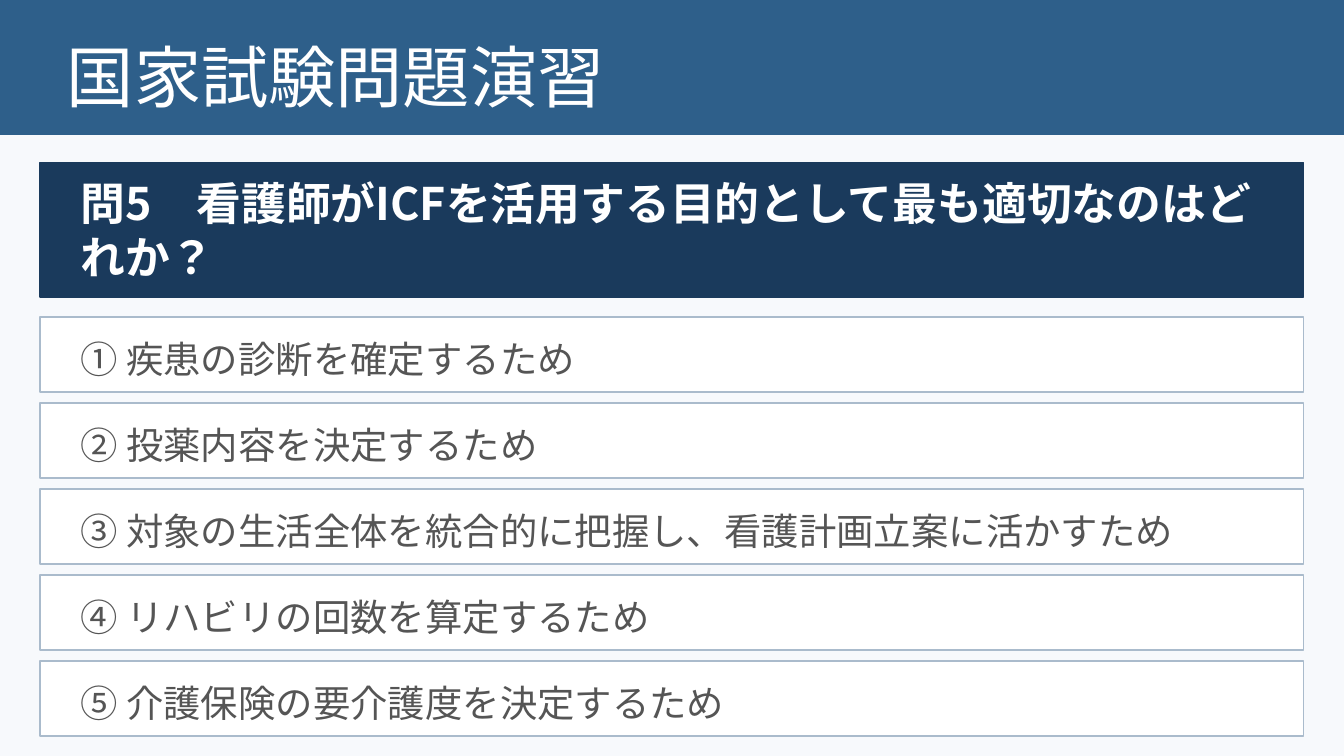
from dataclasses import dataclass

from lxml import etree
from pptx import Presentation
from pptx import util as u
from pptx.dml.color import RGBColor
from pptx.enum import lang, shapes, text
from pptx.oxml.ns import qn
from pptx.slide import Slide

FONT = "Noto Sans CJK JP"
COLORS = {
    "background": "F7F9FC",
    "header": "2E5F8A",
    "question": "1A3A5C",
    "white": "FFFFFF",
    "border": "AABBCC",
    "body": "555555",
}
CHOICES = [
    "① 疾患の診断を確定するため",
    "② 投薬内容を決定するため",
    "③ 対象の生活全体を統合的に把握し、看護計画立案に活かすため",
    "④ リハビリの回数を算定するため",
    "⑤ 介護保険の要介護度を決定するため",
]
PANEL_LEFT, PANEL_WIDTH = 21.6, 676.8
LABEL_LEFT, LABEL_WIDTH = 36, 648
CHOICE_TOP, CHOICE_STEP = 169.92, 46.08


@dataclass
class Box:
    """Position and size in points."""
    left: float
    top: float
    width: float
    height: float

    def lengths(self) -> list[u.Length]:
        return [u.Pt(value) for value in (self.left, self.top, self.width, self.height)]


@dataclass
class Band:
    """A filled panel with a line of text over it."""
    wording: str
    panel: Box
    label: Box
    fill: str
    line: str
    color: str
    size: float
    bold: bool = False


def rgb(name: str) -> RGBColor:
    return RGBColor.from_string(COLORS[name])


def draw_panel(slide: Slide, band: Band) -> None:
    shape = slide.shapes.add_shape(shapes.MSO_SHAPE.RECTANGLE, *band.panel.lengths())
    shape.shadow.inherit = False
    shape.fill.solid()
    shape.fill.fore_color.rgb = rgb(band.fill)
    shape.line.color.rgb = rgb(band.line)
    shape.line.width = u.Pt(1)


def draw_label(slide: Slide, band: Band) -> None:
    text_frame = slide.shapes.add_textbox(*band.label.lengths()).text_frame
    text_frame.word_wrap = True
    text_frame.vertical_anchor = text.MSO_ANCHOR.MIDDLE
    text_frame.text = band.wording
    run = text_frame.paragraphs[0].runs[0]
    run.font.name = FONT
    run.font.size = u.Pt(band.size)
    run.font.bold = band.bold
    run.font.color.rgb = rgb(band.color)
    run.font.language_id = lang.MSO_LANGUAGE_ID.JAPANESE
    # Japanese characters take the East Asian font
    etree.SubElement(run.font._element, qn("a:ea"), typeface=FONT)


def main() -> None:
    presentation = Presentation()
    presentation.slide_width = u.Pt(720)
    presentation.slide_height = u.Pt(405)
    slide = presentation.slides.add_slide(presentation.slide_layouts[6])
    slide.background.fill.solid()
    slide.background.fill.fore_color.rgb = rgb("background")

    # Header and question
    bands = [
        Band("国家試験問題演習", Box(0, 0, 720, 72), Box(28.8, 4.32, 662.4, 72),
             "header", "header", "white", 36),
        Band("問5　看護師がICFを活用する目的として最も適切なのはどれか？",
             Box(PANEL_LEFT, 87.12, PANEL_WIDTH, 72),
             Box(LABEL_LEFT, 87.12, LABEL_WIDTH, 72),
             "question", "question", "white", 24, bold=True),
    ]

    # Answer choices at equal steps
    for index, wording in enumerate(CHOICES):
        top = CHOICE_TOP + index * CHOICE_STEP
        bands.append(Band(wording, Box(PANEL_LEFT, top, PANEL_WIDTH, 40.32),
                          Box(LABEL_LEFT, top + 4.32, LABEL_WIDTH, 36),
                          "white", "border", "body", 20))

    for band in bands:
        draw_panel(slide, band)
        draw_label(slide, band)

    presentation.save("out.pptx")


if __name__ == "__main__":
    main()
